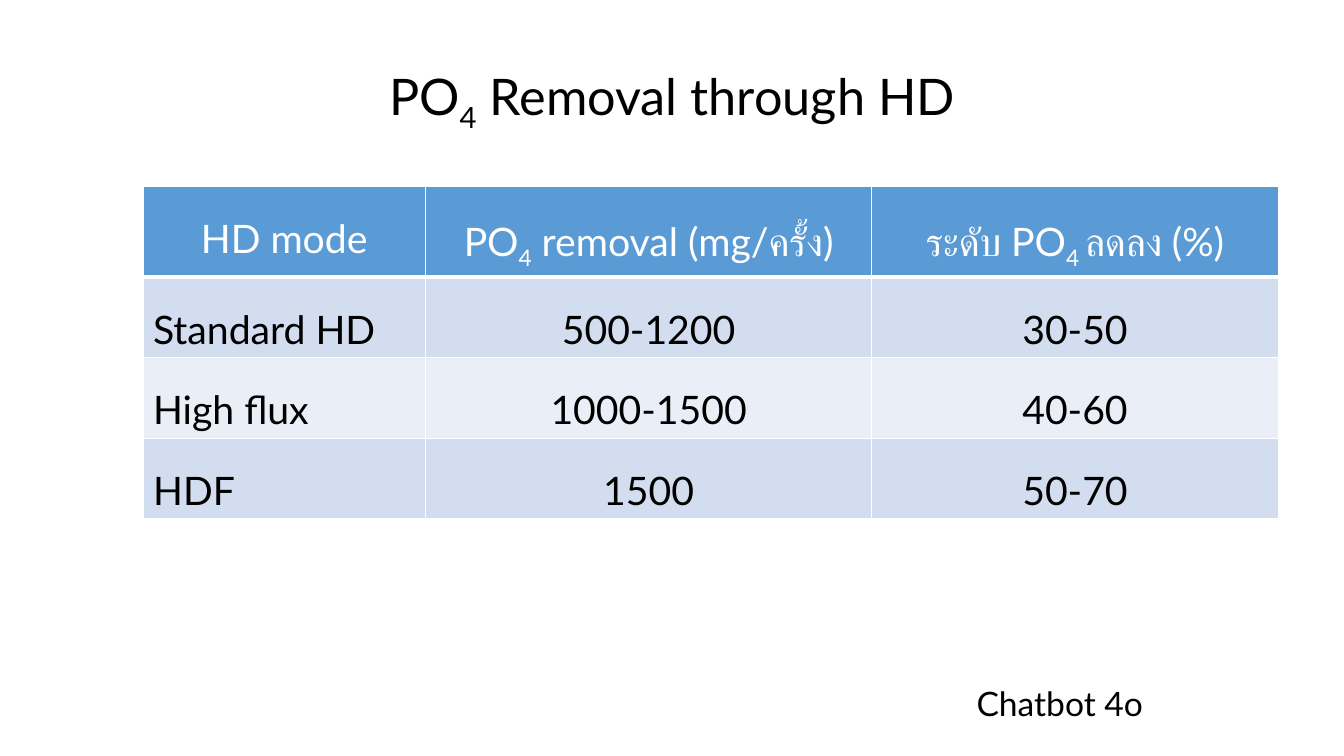
from lxml import etree
from pptx import Presentation
from pptx import util as u
from pptx.dml import color
from pptx.enum import text
from pptx.oxml import ns

HEADERS = ["HD mode", "PO|4| removal (mg/ครั้ง)", "ระดับ PO|4 |ลดลง (%)"]
ROWS = [
    ["Standard HD", "500-1200", "30-50"],
    ["High flux", "1000-1500", "40-60"],
    ["HDF", "1500", "50-70"],
]
COLUMN_WIDTHS = [201.6, 319, 290.2]
ROW_HEIGHTS = [55.4] + [44.6] * len(ROWS)
CENTER = text.PP_ALIGN.CENTER
LEFT = text.PP_ALIGN.LEFT


def rgb(value):
    return color.RGBColor.from_string(value)


class Deck:
    font = "Lato"
    ink = "000000"
    paper = "FFFFFF"
    header_fill = "5B9BD5"
    bands = ["D2DEEF", "EAEFF7"]

    def __init__(self, width, height):
        self.prs = Presentation()
        self.prs.slide_width = u.Pt(width)
        self.prs.slide_height = u.Pt(height)
        self.s = self.prs.slides.add_slide(self.prs.slide_layouts[6])

    def paragraph(self, tf, content, size, ink, align, spacing):
        p = tf.paragraphs[0]
        for name, value in {"alignment": align, "line_spacing": spacing}.items():
            setattr(p, name, value)
        style = {"name": self.font, "size": u.Pt(size), "bold": False}
        for i, part in enumerate(content.split("|")):
            r = p.add_run()
            r.text = part
            for name, value in style.items():
                setattr(r.font, name, value)
            r.font.color.rgb = rgb(ink)
            if i % 2:
                r._r.get_or_add_rPr().set("baseline", "-25000")

    def label(self, content, box, size, align=LEFT, spacing=1.0):
        sp = self.s.shapes.add_textbox(*map(u.Pt, box))
        tf = sp.text_frame
        frame = {"word_wrap": True, "auto_size": text.MSO_AUTO_SIZE.SHAPE_TO_FIT_TEXT}
        for name, value in frame.items():
            setattr(tf, name, value)
        self.paragraph(tf, content, size, self.ink, align, spacing)

    def border(self, cell, widths):
        tc_pr = cell._tc.get_or_add_tcPr()
        for side, width in widths.items():
            ln = etree.SubElement(tc_pr, ns.qn(f"a:ln{side}"), w=str(u.Pt(width)))
            fill = etree.SubElement(ln, ns.qn("a:solidFill"))
            etree.SubElement(fill, ns.qn("a:srgbClr"), val=self.paper)

    def table(self, data, box, widths, heights, size):
        frame = self.s.shapes.add_table(len(data), len(widths), *map(u.Pt, box))
        grid = frame.table
        for column, width in zip(grid.columns, widths):
            column.width = u.Pt(width)
        for row, height in zip(grid.rows, heights):
            row.height = u.Pt(height)
        frame.height = u.Pt(box[3])
        for i, row in enumerate(data):
            header = i == 0
            fill = self.header_fill if header else self.bands[(i - 1) % 2]
            ink = self.paper if header else self.ink
            lines = {"L": 1, "R": 1, "T": 3 if i == 1 else 1, "B": 3 if header else 1}
            for j, content in enumerate(row):
                cell = grid.cell(i, j)
                self.border(cell, lines)
                cell.fill.solid()
                cell.fill.fore_color.rgb = rgb(fill)
                align = CENTER if header or j else LEFT
                self.paragraph(cell.text_frame, content, size, ink, align, 1.5)


def main():
    deck = Deck(960, 540)
    deck.label("PO|4| Removal through HD", (0, 18.7, 960, 67), 36, CENTER, 1.5)
    deck.label("Chatbot 4o", (690.5, 484.6, 196.6, 36), 24)
    box = (102.2, 133.2, sum(COLUMN_WIDTHS), 215.3)
    deck.table([HEADERS] + ROWS, box, COLUMN_WIDTHS, ROW_HEIGHTS, 28)
    deck.prs.save("out.pptx")


if __name__ == "__main__":
    main()
